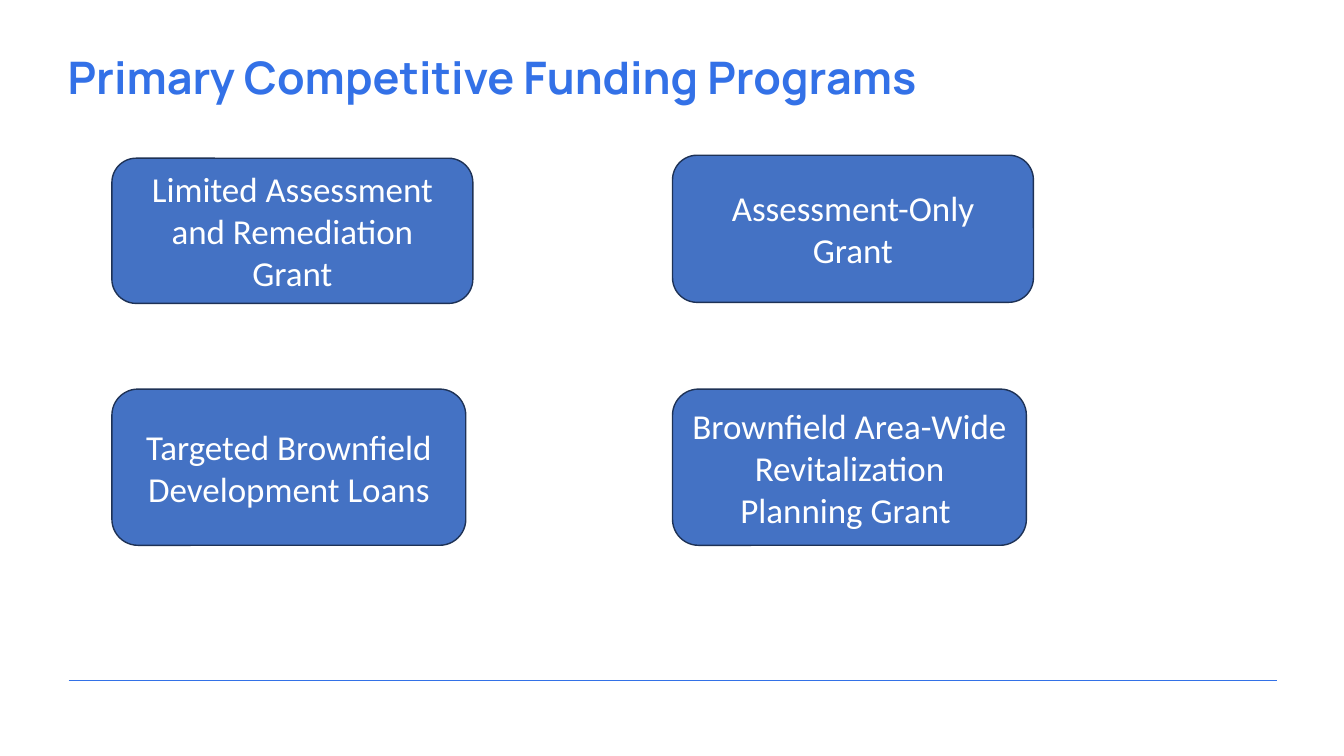
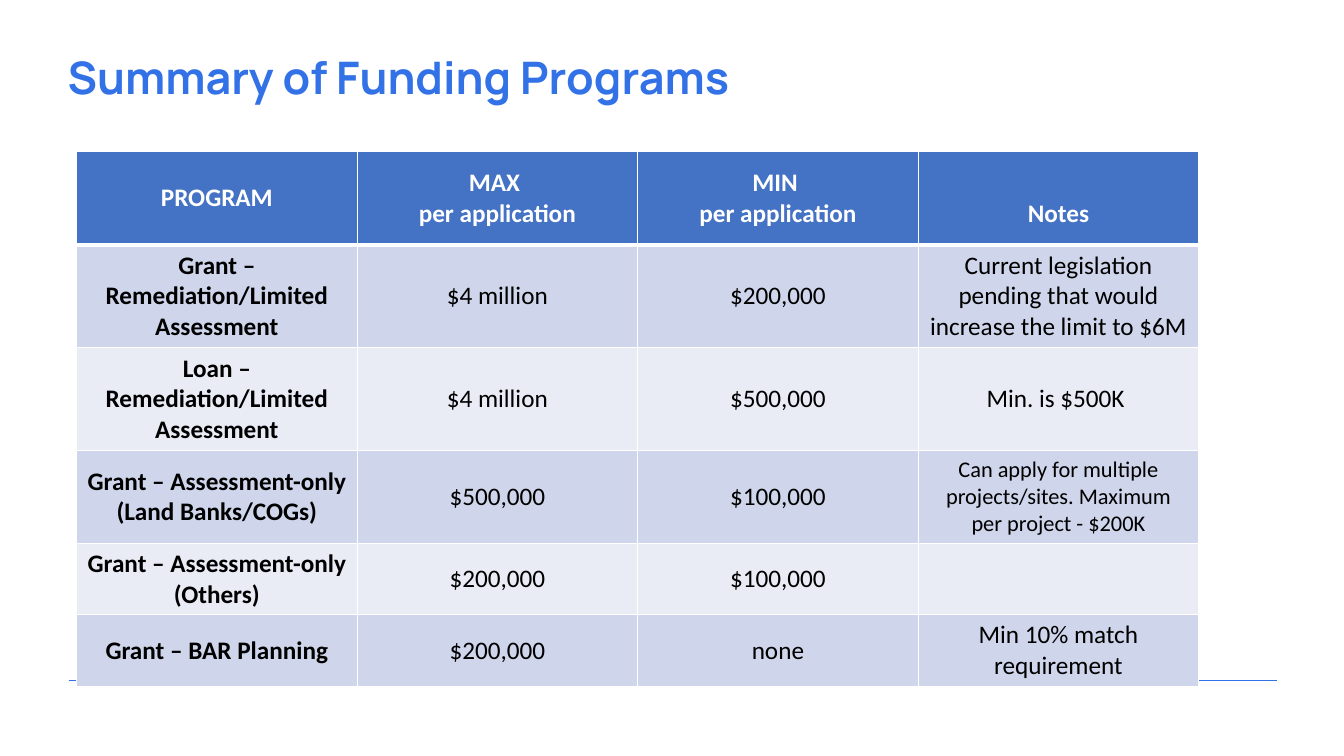
from dataclasses import dataclass

from lxml import etree
from pptx import Presentation
from pptx.dml.color import RGBColor
from pptx.enum.shapes import MSO_CONNECTOR, MSO_SHAPE
from pptx.enum.text import MSO_ANCHOR, MSO_AUTO_SIZE, PP_ALIGN
from pptx.oxml.ns import qn
from pptx.util import Inches, Pt

LINE, ROUND = MSO_CONNECTOR.STRAIGHT, MSO_SHAPE.ROUNDED_RECTANGLE
LEFT, CENTER = PP_ALIGN.LEFT, PP_ALIGN.CENTER
MIDDLE, BOTTOM = MSO_ANCHOR.MIDDLE, MSO_ANCHOR.BOTTOM
NO_FIT = MSO_AUTO_SIZE.NONE


@dataclass(frozen=True)
class Theme:
    brand: str = "3371E7"
    fill: str = "4472C4"
    edge: str = "1E3256"
    light: str = "FFFFFF"
    dark: str = "000000"
    bands: tuple = ("CFD5EA", "E9EBF5")
    head: str = "Manrope"
    body: str = "Calibri"
    title: int = 32
    card: int = 25
    cell: int = 18
    note: int = 16


THEME = Theme()
TITLE_BOX = (0.57, 0.5, 11, 0.59)
RULE = (0.68, 6.75, 12.67, 6.75)
TABLE_BOX = (0.76, 1.5, 11.13, 5.31)
HEIGHTS = (0.93, 1.02, 1.02, 0.92, 0.71, 0.71)

CARDS = (
    ("Limited Assessment and Remediation Grant", (1.11, 1.57, 3.58, 1.44)),
    ("Assessment-Only Grant", (6.67, 1.54, 3.58, 1.46)),
    ("Targeted Brownfield Development Loans", (1.11, 3.86, 3.51, 1.55)),
    ("Brownfield Area-Wide Revitalization Planning Grant ",
     (6.67, 3.86, 3.51, 1.55)),
)
ROWS = (
    ("PROGRAM", "MAX \nper application", "MIN \nper application", "Notes"),
    ("Grant – Remediation/Limited Assessment", "$4 million", "$200,000",
     "Current legislation pending that would increase the limit to $6M "),
    ("Loan – Remediation/Limited Assessment", "$4 million", "$500,000",
     "Min. is $500K "),
    ("Grant – Assessment-only (Land Banks/COGs)", "$500,000", "$100,000",
     "Can apply for multiple projects/sites. Maximum per project - $200K"),
    ("Grant – Assessment-only (Others)", "$200,000", "$100,000", ""),
    ("Grant – BAR Planning", "$200,000", "none", "Min 10% match requirement"),
)
SMALL = (3, 3)  # row and column of the long note


def inches(box):
    return [Inches(n) for n in box]


def rgb(code):
    return RGBColor.from_string(code)


def apply(item, **values):
    for name, value in values.items():
        setattr(item, name, value)


def write(frame, text, color, align=CENTER, **style):
    frame.text = text
    for para in frame.paragraphs:
        para.alignment = align
        apply(para.font, **style)
        para.font.color.rgb = rgb(color)


def add_page(deck, text):
    """Add a slide with the shared title and bottom rule."""
    slide = deck.slides.add_slide(deck.slide_layouts[5])
    title = slide.shapes.title
    left, top, width, height = inches(TITLE_BOX)
    apply(title, left=left, top=top, width=width, height=height)
    frame = title.text_frame
    apply(frame, word_wrap=True, auto_size=NO_FIT, vertical_anchor=MIDDLE)
    write(frame, text, THEME.brand, LEFT, name=THEME.head,
          size=Pt(THEME.title), bold=True)
    apply(frame.paragraphs[0], line_spacing=0.9, space_before=Pt(0))

    rule = slide.shapes.add_connector(LINE, *inches(RULE))
    rule.line.color.rgb = rgb(THEME.brand)
    rule.line.width = Pt(1.25)
    etree.SubElement(rule._element.spPr, qn("a:effectLst"))
    return slide


def add_card(slide, text, box):
    card = slide.shapes.add_shape(ROUND, *inches(box))
    card.shadow.inherit = False
    card.fill.solid()
    card.fill.fore_color.rgb = rgb(THEME.fill)
    card.line.color.rgb = rgb(THEME.edge)
    card.line.width = Pt(1)
    apply(card.text_frame, word_wrap=True, vertical_anchor=MIDDLE)
    write(card.text_frame, text, THEME.light, name=THEME.body,
          size=Pt(THEME.card))


def add_edges(cell, row):
    """Draw white borders, thick between the header and the first row."""
    thick = {(0, "lnB"), (1, "lnT")}
    props = cell._tc.get_or_add_tcPr()
    for side in ("lnL", "lnR", "lnT", "lnB"):
        width = Pt(3 if (row, side) in thick else 1)
        edge = etree.SubElement(props, qn("a:" + side), w=str(width))
        fill = etree.SubElement(edge, qn("a:solidFill"))
        etree.SubElement(fill, qn("a:srgbClr"), val=THEME.light)


def fill_cell(cell, text, row, col):
    head = row == 0
    add_edges(cell, row)
    cell.fill.solid()
    cell.fill.fore_color.rgb = rgb(
        THEME.fill if head else THEME.bands[(row - 1) % 2])
    cell.vertical_anchor = MIDDLE
    size = THEME.note if (row, col) == SMALL else THEME.cell
    write(cell.text_frame, text, THEME.light if head else THEME.dark,
          name=THEME.body, size=Pt(size), bold=head or col == 0)


def add_grid(slide, box):
    count = len(ROWS[0])
    table = slide.shapes.add_table(len(ROWS), count, *inches(box)).table
    for col in table.columns:
        col.width = Inches(box[2] / count)
    for row, texts in enumerate(ROWS):
        table.rows[row].height = Inches(HEIGHTS[row])
        for col, text in enumerate(texts):
            fill_cell(table.cell(row, col), text, row, col)
    apply(table.cell(0, count - 1), vertical_anchor=BOTTOM,
          margin_bottom=Inches(0.16))


def main():
    deck = Presentation()
    apply(deck, slide_width=Inches(13.33), slide_height=Inches(7.5))
    slide = add_page(deck, "Primary Competitive Funding Programs")
    for text, box in CARDS:
        add_card(slide, text, box)
    add_grid(add_page(deck, "Summary of Funding Programs"), TABLE_BOX)
    deck.save("out.pptx")


if __name__ == "__main__":
    main()
